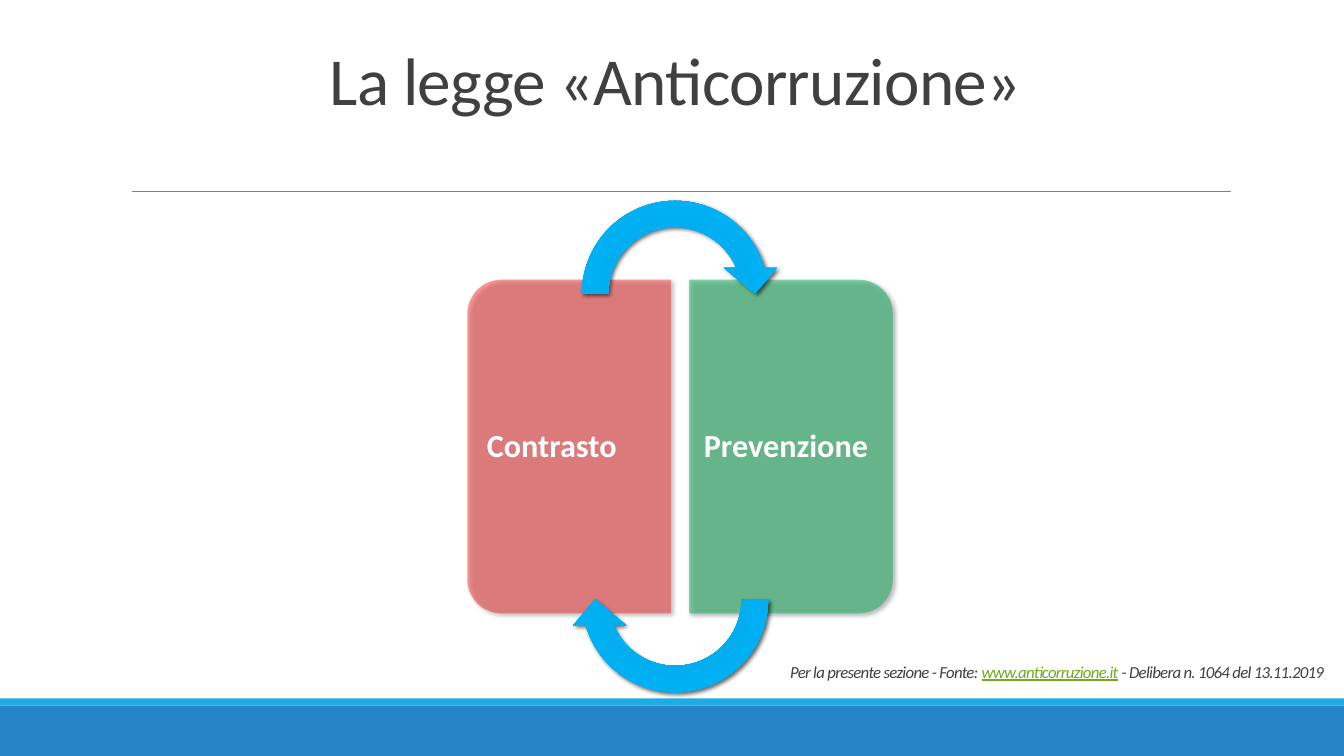
import pptx
import pptx.dml.color
import pptx.enum.shapes
import pptx.enum.text
import pptx.oxml
import pptx.oxml.ns
import pptx.util
from dataclasses import dataclass

Inches = pptx.util.Inches
Pt = pptx.util.Pt
RGB = pptx.dml.color.RGBColor.from_string
MSO_SHAPE = pptx.enum.shapes.MSO_SHAPE
ALIGN = pptx.enum.text.PP_ALIGN
ANCHOR = pptx.enum.text.MSO_ANCHOR
qn = pptx.oxml.ns.qn
NS = pptx.oxml.ns.nsdecls("a")


@dataclass(frozen=True)
class Theme:
    font: str = "Calibri"
    title_size: int = 48
    label_size: int = 23
    source_size: int = 12
    text: str = "404040"
    white: str = "FFFFFF"
    link: str = "6EAC1C"
    rule: str = "808080"
    band: str = "2683C6"
    strip: str = "1CADE4"
    contrast: str = "FF0000"
    prevention: str = "00B050"
    arrow: tuple = ((0, "00ADEF"), (34, "03ADEE"), (70, "00B1F5"), (100, "12B1EE"))


def apply(target, values):
    for name, value in values.items():
        setattr(target, name, value)


class SlideBuilder:
    def __init__(self, s, theme):
        self.s = s
        self.theme = theme

    def shape(self, kind, box, color=None, alpha=None, rotation=0, adjustments=(), shadow=False):
        sp = self.s.shapes.add_shape(kind, *map(Inches, box))
        sp.rotation = rotation
        for i, value in enumerate(adjustments):
            sp.adjustments[i] = value
        sp.line.fill.background()
        if color:
            sp.fill.solid()
            sp.fill.fore_color.rgb = RGB(color)
        if alpha:
            clr = sp.fill._xPr.find(qn("a:solidFill"))[0]
            clr.append(pptx.oxml.parse_xml(f'<a:alpha {NS} val="{alpha * 1000}"/>'))
        sp.shadow.inherit = False
        if shadow:
            self.add_shadow(sp)
        return sp

    def add_shadow(self, sp):
        effects = sp._element.spPr.find(qn("a:effectLst"))
        effects.append(pptx.oxml.parse_xml(
            f'<a:outerShdw {NS} blurRad="{Pt(3)}" dist="{Pt(2)}" dir="{45 * 60000}" '
            'algn="ctr" rotWithShape="0"><a:srgbClr val="000000">'
            '<a:alpha val="60000"/></a:srgbClr></a:outerShdw>'))

    def cycle_arrow(self, box, rotation):
        sp = self.shape(MSO_SHAPE.CIRCULAR_ARROW, box, rotation=rotation, shadow=True,
                        adjustments=(0.125, 11.423, 204.577, 108, 0.125))
        sp.fill.background()
        stops = "".join(f'<a:gs pos="{pos * 1000}"><a:srgbClr val="{color}"/></a:gs>'
                        for pos, color in self.theme.arrow)
        spPr = sp._element.spPr
        spPr.replace(spPr.find(qn("a:noFill")), pptx.oxml.parse_xml(
            f'<a:gradFill {NS} rotWithShape="1"><a:gsLst>{stops}</a:gsLst>'
            '<a:path path="circle"><a:fillToRect l="100000" t="100000" r="100000" b="100000"/>'
            '</a:path></a:gradFill>'))

    def line(self, start, end, color, width):
        c = self.s.shapes.add_connector(pptx.enum.shapes.MSO_CONNECTOR.STRAIGHT,
                                        *map(Inches, start + end))
        apply(c.line, {"width": Pt(width)})
        c.line.color.rgb = RGB(color)
        c._element.spPr.append(pptx.oxml.parse_xml(f"<a:effectLst {NS}/>"))

    def text(self, box, runs, size, align=ALIGN.CENTER, anchor=ANCHOR.BOTTOM, spacing=0.85,
             tracking=-50, margins=(0.1, 0.05, 0.1, 0.05), **style):
        tf = self.s.shapes.add_textbox(*map(Inches, box)).text_frame
        sides = ("margin_left", "margin_top", "margin_right", "margin_bottom")
        apply(tf, {"word_wrap": True, "vertical_anchor": anchor,
                   **dict(zip(sides, map(Inches, margins)))})
        p = tf.paragraphs[0]
        apply(p, {"alignment": align, "line_spacing": spacing})
        for content, color, underline in runs:
            r = p.add_run()
            r.text = content
            apply(r.font, {"name": self.theme.font, "size": Pt(size),
                           "underline": underline, **style})
            r.font.color.rgb = RGB(color)
            r._r.get_or_add_rPr().set("spc", str(tracking))


def main():
    theme = Theme()
    prs = pptx.Presentation()
    apply(prs, {"slide_width": Inches(13.33), "slide_height": Inches(7.5)})
    slide = SlideBuilder(prs.slides.add_slide(prs.slide_layouts[6]), theme)

    slide.shape(MSO_SHAPE.RECTANGLE, (0, 7, 13.33, 0.5), theme.band)
    slide.shape(MSO_SHAPE.RECTANGLE, (0, 6.93, 13.33, 0.07), theme.strip)
    slide.line((1.31, 1.9), (12.21, 1.9), theme.rule, 0.5)
    slide.text((1.2, 0.31, 11, 0.92), [("La legge «Anticorruzione»", theme.text, False)],
               theme.title_size)

    panels = (
        ("Contrasto", theme.contrast, 38, 270, 3.99, 4.73, (0.1, 0.16, 0.14, 0.16)),
        ("Prevenzione", theme.prevention, 45, 90, 6.19, 6.84, (0.14, 0.16, 0.1, 0.16)),
    )
    for label, color, alpha, rotation, left, label_left, margins in panels:
        slide.shape(MSO_SHAPE.ROUND_2_SAME_RECTANGLE, (left, 3.42, 3.31, 2.02), color, alpha,
                    rotation, (0.167, 0), shadow=True)
        slide.text((label_left, 2.88, 1.92, 3.11), [(label, theme.white, False)],
                   theme.label_size, ALIGN.LEFT, ANCHOR.MIDDLE, 0.9, 0, margins, bold=True)

    for top, rotation in ((1.86, 0), (4.89, 180)):
        slide.cycle_arrow((5.64, top, 2.11, 2.11), rotation)

    slide.text((7.51, 6.17, 5.95, 0.64), [
        ("Per la presente sezione - Fonte: ", theme.text, False),
        ("www.anticorruzione.it", theme.link, True),
        (" - Delibera n. 1064 del 13.11.2019", theme.text, False),
    ], theme.source_size, italic=True)

    prs.save("out.pptx")


if __name__ == "__main__":
    main()
